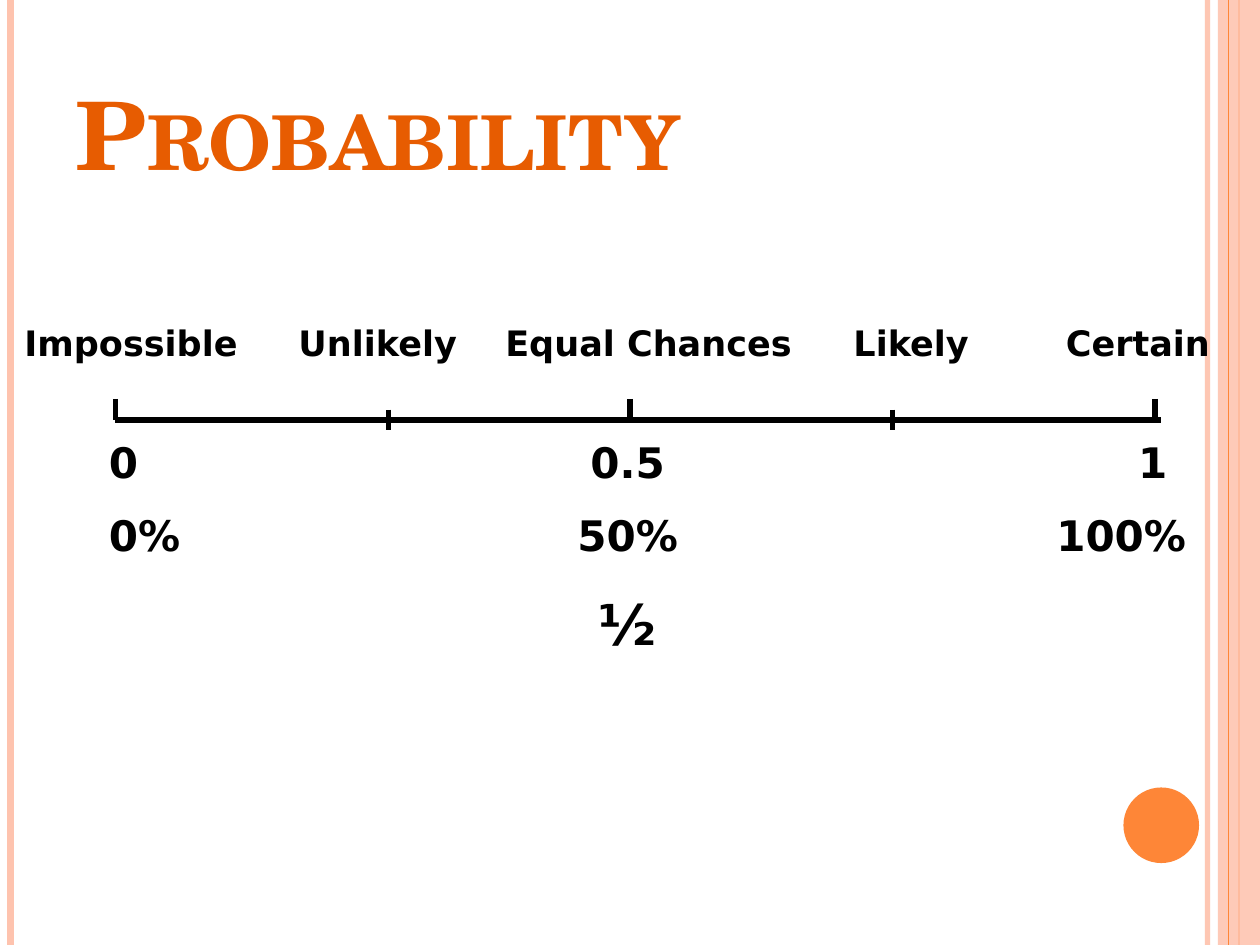
from collections import namedtuple

from lxml.etree import SubElement
from pptx import Presentation
from pptx.dml.color import RGBColor
from pptx.enum.shapes import MSO_CONNECTOR, MSO_SHAPE
from pptx.enum.text import MSO_ANCHOR, MSO_AUTO_SIZE
from pptx.oxml.ns import qn
from pptx.util import Inches, Pt

BLACK = RGBColor(0x00, 0x00, 0x00)
ORANGE = RGBColor(0xFE, 0x86, 0x37)
DARK_ORANGE = RGBColor(0xE7, 0x5C, 0x01)
PEACH = RGBColor(0xFE, 0xC3, 0xAE)

BODY_FONT = "DejaVu Sans"
TITLE_FONT = "TeX Gyre Schola"
GRID = Inches(1) // 12

Box = namedtuple("Box", "left top width height")


def grid(length):
    """Turn a number of grid cells into a slide length."""
    return int(length * GRID)


def set_opacity(parent, percent):
    """Make the solid colour inside the given element partly transparent."""
    color = next(parent.iter(qn("a:srgbClr")))
    SubElement(color, qn("a:alpha"), val=str(percent * 1000))


def add_line(slide, start, end, color, width, opacity=100):
    """Draw a straight line between two grid points."""
    line = slide.shapes.add_connector(
        MSO_CONNECTOR.STRAIGHT, *[grid(value) for value in start + end]
    )
    line.line.color.rgb = color
    line.line.width = Pt(width)
    properties = line._element.spPr
    SubElement(properties, qn("a:effectLst"))
    if opacity < 100:
        set_opacity(properties, opacity)


def add_filled_shape(slide, kind, box, color, opacity=100):
    """Place a flat shape without an outline."""
    shape = slide.shapes.add_shape(kind, *[grid(value) for value in box])
    shape.shadow.inherit = False
    shape.fill.solid()
    shape.fill.fore_color.rgb = color
    shape.line.fill.background()
    if opacity < 100:
        set_opacity(shape._element.spPr, opacity)


def add_text_frame(slide, box):
    """Place a wrapping text box and return its text frame."""
    text_frame = slide.shapes.add_textbox(*[grid(value) for value in box]).text_frame
    text_frame.word_wrap = True
    return text_frame


def add_run(paragraph, text, font_name, size, color):
    """Append a bold run to a paragraph."""
    run = paragraph.add_run()
    run.text = text
    run.font.name = font_name
    run.font.size = Pt(size)
    run.font.bold = True
    run.font.color.rgb = color
    return run


def add_tabbed_text(paragraph, entries, size):
    """Write entries of text, tab position in cells and tab alignment."""
    tab_list = SubElement(paragraph._p.get_or_add_pPr(), qn("a:tabLst"))
    for text, position, alignment in entries:
        SubElement(tab_list, qn("a:tab"), pos=str(grid(position)), algn=alignment)
        add_run(paragraph, "\t" + text, BODY_FONT, size, BLACK)


def add_frame(slide, box):
    """Decorate the left and right edges of the slide."""
    bottom = box.top + box.height
    right = box.left + box.width
    for column, color, width, opacity in (
        (right - 5, PEACH, 3, 93),
        (box.left + 1, PEACH, 4.5, 100),
        (right - 2, ORANGE, 1.5, 100),
    ):
        add_line(slide, (column, box.top), (column, bottom), color, width, opacity)
    band = Box(right - 4, box.top, 4, box.height)
    add_filled_shape(slide, MSO_SHAPE.RECTANGLE, band, PEACH, 87)
    add_line(slide, (right - 3, box.top), (right - 3, bottom), ORANGE, 0.75)
    disc = Box(right - 13, bottom - 15, 7.2, 7.2)
    add_filled_shape(slide, MSO_SHAPE.OVAL, disc, ORANGE)


def add_title(slide, box):
    """Write the slide title in small capitals at the bottom of its box."""
    text_frame = add_text_frame(slide, box)
    text_frame.vertical_anchor = MSO_ANCHOR.BOTTOM
    run = add_run(text_frame.paragraphs[0], "Probability", TITLE_FONT, 54, DARK_ORANGE)
    run.font._element.set("cap", "small")


def add_chance_labels(slide, box):
    """Write the chance words above the scale."""
    text_frame = add_text_frame(slide, box)
    text_frame.auto_size = MSO_AUTO_SIZE.SHAPE_TO_FIT_TEXT
    words = ("Impossible", "Unlikely", "Equal Chances", "Likely", "Certain")
    positions = (11.3, 34.8, 60.6, 85.6, 107.2)
    entries = [(word, position, "ctr") for word, position in zip(words, positions)]
    add_tabbed_text(text_frame.paragraphs[0], entries, 20)


def add_scale(slide, box):
    """Draw the scale with raised main ticks and crossing quarter ticks."""
    axis = box.top + 2
    add_line(slide, (box.left, axis), (box.left + box.width, axis), BLACK, 3)
    for offset, rise in ((0, 2), (26, 1), (49, 2), (74, 1), (99, 2)):
        column = box.left + offset
        top = axis - rise
        add_line(slide, (column, top), (column, top + 2), BLACK, 3)


def add_scale_values(slide, box):
    """Write decimals, percentages and the fraction below the scale."""
    text_frame = add_text_frame(slide, box)
    text_frame.auto_size = MSO_AUTO_SIZE.SHAPE_TO_FIT_TEXT
    middle = 50.6
    rows = (
        ([("0", 1.2, "l"), ("0.5", middle, "ctr"), ("1", 100.6, "ctr")], 24, 0),
        ([("0%", 1.2, "l"), ("50%", middle, "ctr"), ("100%", 97.6, "ctr")], 24, 13),
        ([("½", middle, "ctr")], 32, 17),
    )
    for index, (entries, size, space) in enumerate(rows):
        paragraph = text_frame.add_paragraph() if index else text_frame.paragraphs[0]
        paragraph.space_before = Pt(space)
        add_tabbed_text(paragraph, entries, size)


def main():
    """Build the probability slide and save it."""
    presentation = Presentation()
    presentation.slide_width = grid(120)
    presentation.slide_height = grid(90)
    slide = presentation.slides.add_slide(presentation.slide_layouts[6])
    add_frame(slide, Box(0, 0, 120, 90))
    add_title(slide, Box(6, 3.6, 98, 15))
    add_chance_labels(slide, Box(0, 30, 120, 5.25))
    add_scale(slide, Box(11, 38, 99.6, 3))
    add_scale_values(slide, Box(8, 41, 112, 23))
    presentation.save("out.pptx")


if __name__ == "__main__":
    main()
